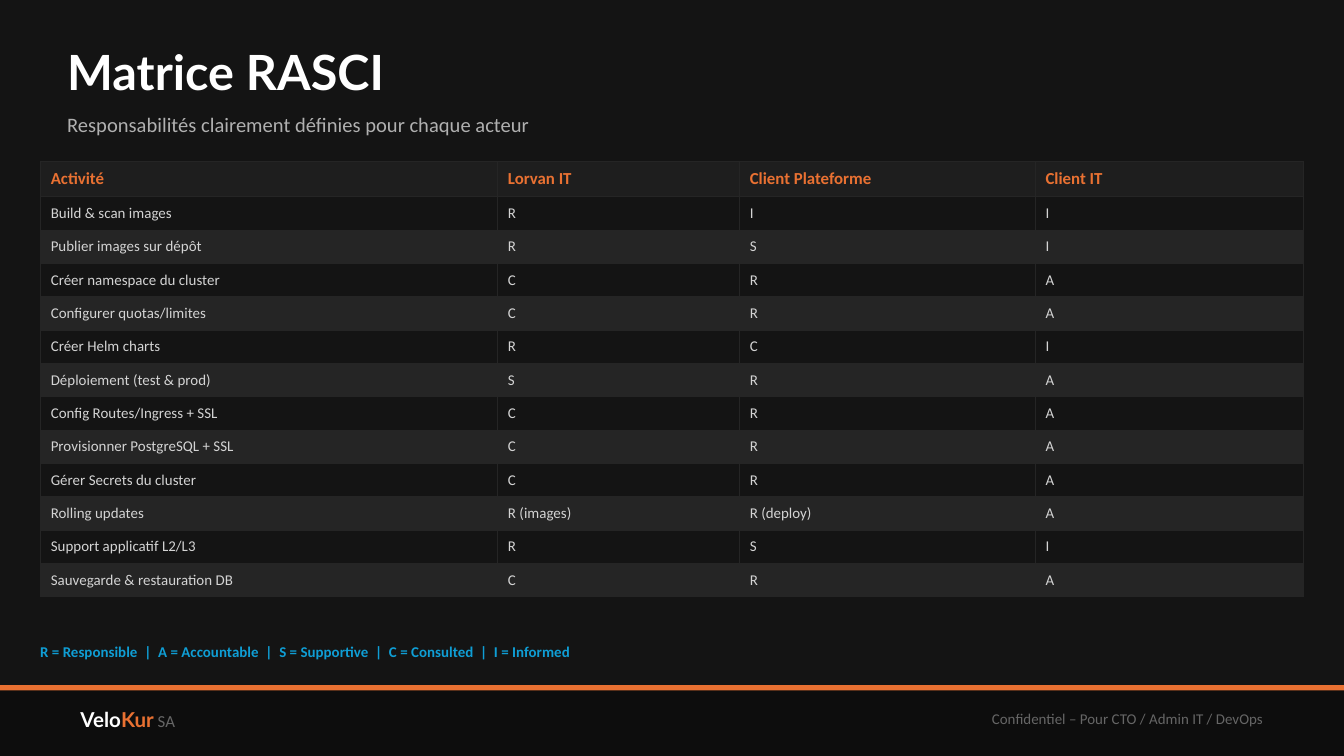
from dataclasses import dataclass

from lxml.etree import SubElement
from pptx import Presentation
from pptx.dml.color import RGBColor
from pptx.enum.shapes import MSO_SHAPE
from pptx.enum.text import MSO_ANCHOR, MSO_AUTO_SIZE, PP_ALIGN
from pptx.oxml.ns import qn
from pptx.util import Cm, Pt


@dataclass(frozen=True)
class Theme:
    back: str = "141414"
    foot: str = "0D0D0D"
    head: str = "1E1E1E"
    band: str = "252525"
    accent: str = "E97132"
    blue: str = "0F9ED5"
    white: str = "FFFFFF"
    body: str = "D4D4D4"
    soft: str = "B0B0B0"
    dim: str = "666666"
    display: str = "Lato"
    text: str = "Calibri"
    title: int = 26
    lead: int = 11
    label: int = 9
    small: int = 8


def rgb(code):
    return RGBColor.from_string(code)


class Board:
    def __init__(self, theme, slide):
        self.theme = theme
        self.slide = slide
        slide.background.fill.solid()
        slide.background.fill.fore_color.rgb = rgb(theme.back)

    def style(self, run, size, color, bold=False, face=None):
        font = run.font
        font.name = face or self.theme.text
        font.size = Pt(size)
        font.bold = bold
        font.color.rgb = rgb(color)

    def bar(self, top, height, color):
        shape = self.slide.shapes.add_shape(
            MSO_SHAPE.RECTANGLE, 0, Cm(top), Cm(25.4), Cm(height))
        shape.shadow.inherit = False
        shape.fill.solid()
        shape.fill.fore_color.rgb = rgb(color)
        shape.line.fill.background()

    def letter(self, shape, runs, align=PP_ALIGN.LEFT, flush=True):
        """Fill a shape with styled runs: (text, size, color, bold, face)."""
        frame = shape.text_frame
        frame.word_wrap = True
        frame.auto_size = MSO_AUTO_SIZE.NONE
        frame.vertical_anchor = MSO_ANCHOR.MIDDLE
        if flush:
            frame.margin_left = frame.margin_right = 0
            frame.margin_top = frame.margin_bottom = 0
        para = frame.paragraphs[0]
        para.alignment = align
        for text, *look in runs:
            run = para.add_run()
            run.text = text
            self.style(run, *look)

    def title(self, box, runs):
        shape = self.slide.shapes.title
        shape.left, shape.top, shape.width, shape.height = map(Cm, box)
        self.letter(shape, runs)

    def label(self, box, runs, **layout):
        shape = self.slide.shapes.add_textbox(*map(Cm, box))
        self.letter(shape, runs, **layout)

    def border(self, cell):
        props = cell._tc.get_or_add_tcPr()
        for index, side in enumerate(("lnL", "lnR", "lnT", "lnB")):
            line = SubElement(props, qn(f"a:{side}"), w=str(Pt(0.5)))
            fill = SubElement(line, qn("a:solidFill"))
            SubElement(fill, qn("a:srgbClr"), val=self.theme.band)
            props.insert(index, line)

    def cell(self, cell, text, fill, look):
        cell.margin_left = cell.margin_right = Cm(0.2)
        cell.margin_top = cell.margin_bottom = Cm(0.14)
        cell.vertical_anchor = MSO_ANCHOR.MIDDLE
        cell.fill.solid()
        cell.fill.fore_color.rgb = rgb(fill)
        self.border(cell)
        cell.text_frame.text = text
        self.style(cell.text_frame.paragraphs[0].runs[0], *look)

    def table(self, left, top, widths, heads, rows):
        theme = self.theme
        tall, low = 0.67, 0.63
        table = self.slide.shapes.add_table(
            len(rows) + 1, len(heads), Cm(left), Cm(top),
            Cm(sum(widths)), Cm(tall + low * len(rows))).table
        for column, width in zip(table.columns, widths):
            column.width = Cm(width)
        for y, texts in enumerate([heads, *rows]):
            table.rows[y].height = Cm(low if y else tall)
            if y == 0:
                fill, look = theme.head, (theme.label, theme.accent, True)
            else:
                fill = theme.back if y % 2 else theme.band
                look = (theme.small, theme.body)
            for x, text in enumerate(texts):
                self.cell(table.cell(y, x), text, fill, look)


HEADS = ("Activité", "Lorvan IT", "Client Plateforme", "Client IT")
ROWS = (
    ("Build & scan images", "R", "I", "I"),
    ("Publier images sur dépôt", "R", "S", "I"),
    ("Créer namespace du cluster", "C", "R", "A"),
    ("Configurer quotas/limites", "C", "R", "A"),
    ("Créer Helm charts", "R", "C", "I"),
    ("Déploiement (test & prod)", "S", "R", "A"),
    ("Config Routes/Ingress + SSL", "C", "R", "A"),
    ("Provisionner PostgreSQL + SSL", "C", "R", "A"),
    ("Gérer Secrets du cluster", "C", "R", "A"),
    ("Rolling updates", "R (images)", "R (deploy)", "A"),
    ("Support applicatif L2/L3", "R", "S", "I"),
    ("Sauvegarde & restauration DB", "C", "R", "A"),
)
LEGEND = ("R = Responsible", "A = Accountable", "S = Supportive",
          "C = Consulted", "I = Informed")


def main():
    deck = Presentation()
    deck.slide_width, deck.slide_height = Cm(25.4), Cm(14.29)
    theme = Theme()
    board = Board(theme, deck.slides.add_slide(deck.slide_layouts[5]))

    board.bar(12.95, 1.34, theme.foot)
    board.bar(12.95, 0.1, theme.accent)
    board.label((1.27, 13.08, 7.62, 1.02), [
        ("Velo", theme.lead, theme.white, True, theme.display),
        ("Kur", theme.lead, theme.accent, True, theme.display),
        (" SA", theme.label, theme.dim)], flush=False)
    board.label((13.97, 13.08, 10.16, 1.02), [
        ("Confidentiel – Pour CTO / Admin IT / DevOps",
         theme.small, theme.dim)], align=PP_ALIGN.RIGHT, flush=False)

    board.title((1.27, 0.64, 22.86, 1.4), [
        ("Matrice RASCI", theme.title, theme.white, True, theme.display)])
    board.label((1.27, 1.91, 22.86, 0.89), [
        ("Responsabilités clairement définies pour chaque acteur",
         theme.lead, theme.soft)])
    board.table(0.76, 3.05, (8.64, 4.57, 5.59, 5.08), HEADS, ROWS)
    board.label((0.76, 11.94, 23.88, 0.76), [
        ("  |  ".join(LEGEND), theme.small, theme.blue, True)])

    deck.save("out.pptx")


if __name__ == "__main__":
    main()
